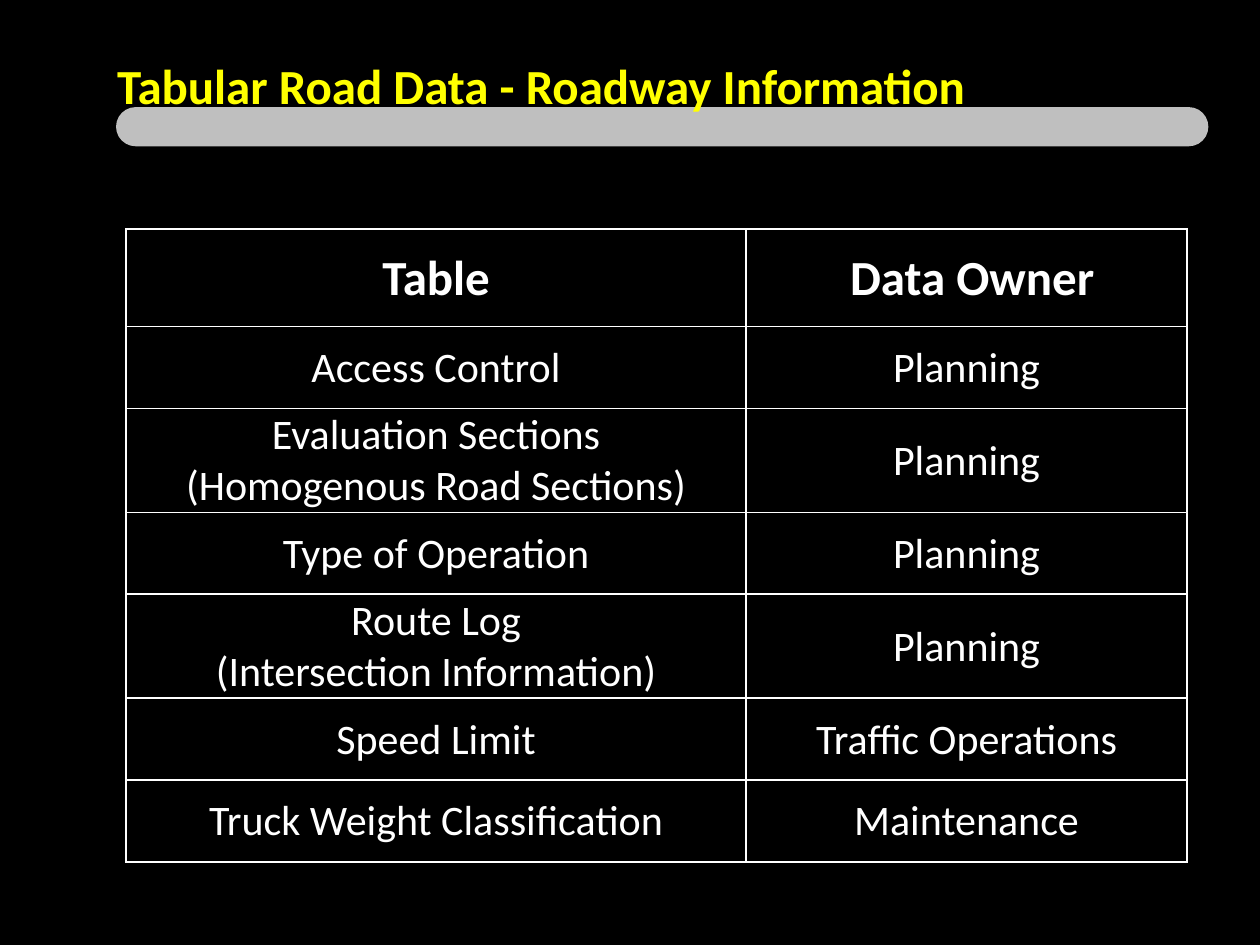
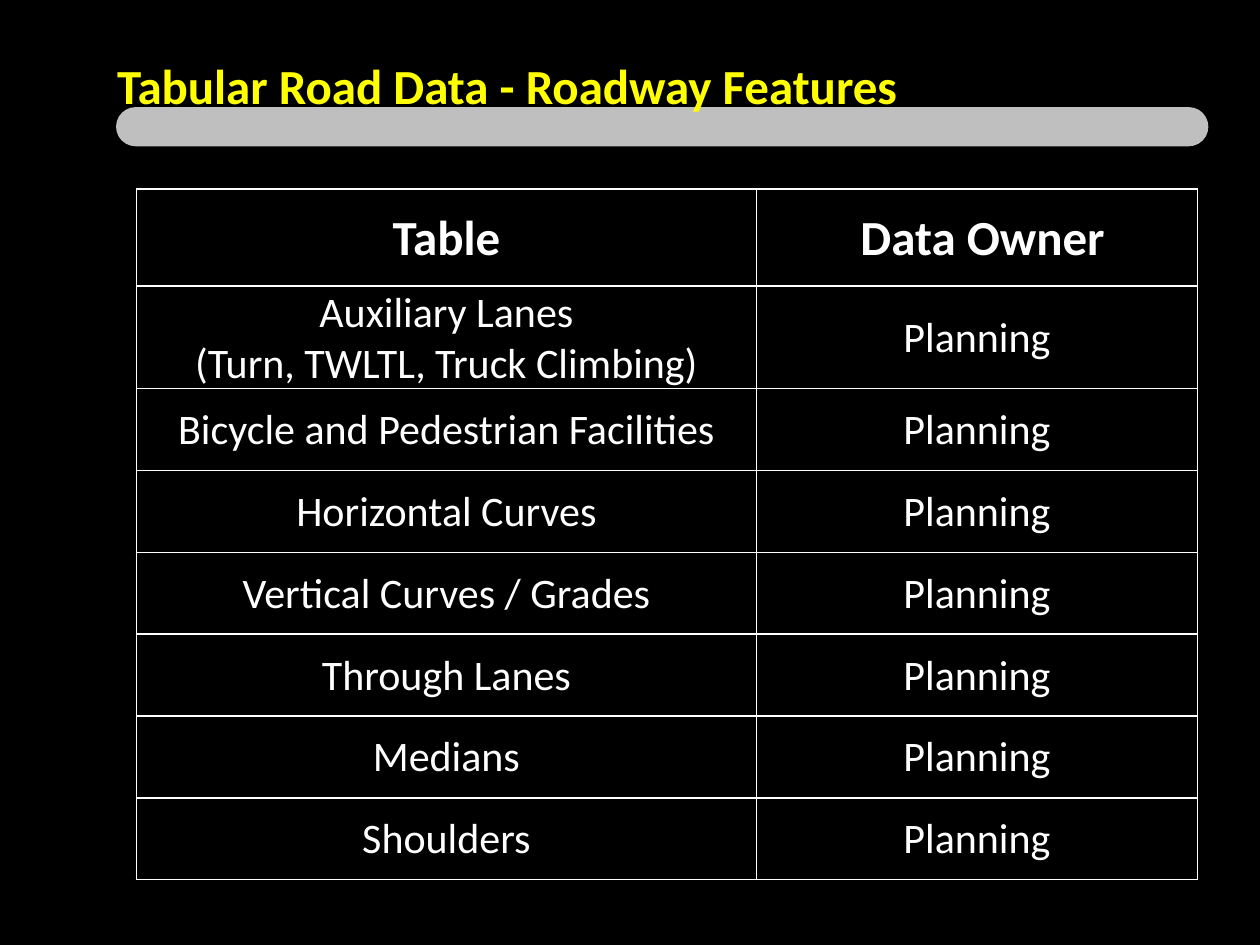
from dataclasses import dataclass

from lxml.etree import SubElement
from pptx import Presentation
from pptx.dml.color import RGBColor
from pptx.enum.shapes import MSO_SHAPE
from pptx.enum.text import MSO_ANCHOR, PP_ALIGN
from pptx.oxml.ns import qn
from pptx.util import Cm, Pt


@dataclass(frozen=True)
class Theme:
    font: str = "Calibri"
    back: str = "000000"
    ink: str = "FFFFFF"
    title: str = "FFFF00"
    band: str = "BFBFBF"
    head: int = 28
    body: int = 24
    rule: int = 1


THEME = Theme()
COLS = (Cm(12.5), Cm(8.89))
HEAD_ROW, BODY_ROW = Cm(1.96), Cm(1.65)
INSET = Cm(0.03)
HEADS = ("Table", " Data Owner")

INFO = [
    ("Access Control", "Planning"),
    ("Evaluation Sections\n(Homogenous Road Sections)", "Planning"),
    ("Type of Operation", "Planning"),
    ("Route Log\n(Intersection Information)", "Planning"),
    ("Speed Limit", "Traffic Operations"),
    ("Truck Weight Classification", "Maintenance"),
]
FEATURES = [(name, "Planning") for name in (
    "Auxiliary Lanes\n(Turn, TWLTL, Truck Climbing)",
    "Bicycle and Pedestrian Facilities",
    "Horizontal Curves",
    "Vertical Curves / Grades",
    "Through Lanes",
    "Medians",
    "Shoulders",
)]


def paint(fill, color):
    fill.solid()
    fill.fore_color.rgb = RGBColor.from_string(color)


def write(frame, text, size, color, bold, align):
    """Put each line of the text in a paragraph of its own."""
    for i, line in enumerate(text.split("\n")):
        para = frame.add_paragraph() if i else frame.paragraphs[0]
        para.alignment = align
        run = para.add_run()
        run.text = line
        font = run.font
        font.name, font.size, font.bold = THEME.font, Pt(size), bold
        font.color.rgb = RGBColor.from_string(color)


def add_band(slide):
    band = slide.shapes.add_shape(
        MSO_SHAPE.ROUNDED_RECTANGLE, Cm(2.34), Cm(2.16), Cm(22.02), Cm(0.79))
    band.adjustments[0] = 0.5
    band.shadow.inherit = False
    paint(band.fill, THEME.band)
    band.line.fill.background()


def add_title(slide, text):
    box = slide.shapes.add_textbox(Cm(2.11), Cm(1.07), Cm(20.96), Cm(1.27))
    frame = box.text_frame
    frame.word_wrap = True
    frame.vertical_anchor = MSO_ANCHOR.MIDDLE
    write(frame, text, THEME.head, THEME.title, True, PP_ALIGN.LEFT)


def rule_cell(cell):
    """Draw a line on all four sides; must come before the cell's fill."""
    props = cell._tc.get_or_add_tcPr()
    for side in ("lnL", "lnR", "lnT", "lnB"):
        line = SubElement(props, qn(f"a:{side}"), w=str(Pt(THEME.rule)))
        fill = SubElement(line, qn("a:solidFill"))
        SubElement(fill, qn("a:srgbClr"), val=THEME.ink)


def fill_cell(cell, text, size, bold):
    cell.margin_left = cell.margin_right = cell.margin_top = INSET
    cell.margin_bottom = 0
    cell.vertical_anchor = MSO_ANCHOR.MIDDLE
    rule_cell(cell)
    paint(cell.fill, THEME.back)
    write(cell.text_frame, text, size, THEME.ink, bold, PP_ALIGN.CENTER)


def add_grid(slide, left, top, items):
    rows = [HEADS, *items]
    high = HEAD_ROW + BODY_ROW * len(items)
    grid = slide.shapes.add_table(
        len(rows), len(COLS), left, top, sum(COLS), high).table
    grid.first_row = grid.horz_banding = False
    for col, width in zip(grid.columns, COLS):
        col.width = width
    for r, row in enumerate(rows):
        head = r == 0
        grid.rows[r].height = HEAD_ROW if head else BODY_ROW
        for c, text in enumerate(row):
            size = THEME.head if head else THEME.body
            fill_cell(grid.cell(r, c), text, size, head)


def add_page(deck, topic, left, top, items):
    slide = deck.slides.add_slide(deck.slide_layouts[6])
    paint(slide.background.fill, THEME.back)
    add_grid(slide, left, top, items)
    add_band(slide)
    add_title(slide, f"Tabular Road Data - {topic}")


def main():
    deck = Presentation()
    deck.slide_width, deck.slide_height = Cm(25.4), Cm(19.05)
    add_page(deck, "Roadway Information", Cm(2.54), Cm(4.62), INFO)
    add_page(deck, "Roadway Features", Cm(2.75), Cm(3.81), FEATURES)
    deck.save("out.pptx")


if __name__ == "__main__":
    main()
